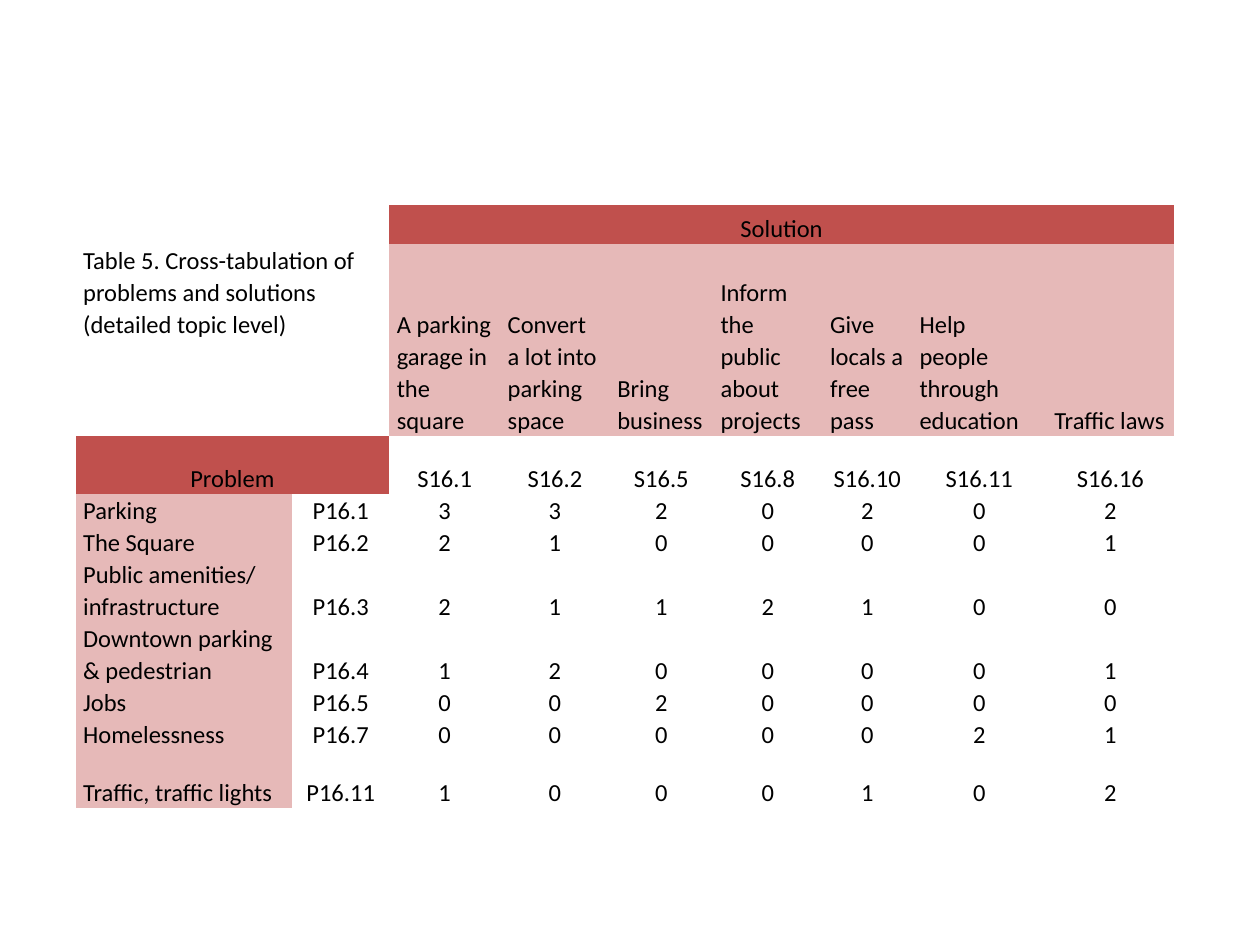
from pptx import Presentation
from pptx.dml.color import RGBColor
from pptx.enum import text
from pptx.util import Inches, Pt

FONT, SIZE, LINE_SPACING = "Calibri", 14, 1.07
BLACK, RED, PINK = "000000", "C0504D", "E6B9B8"
PLAIN_STYLE = "{2D5ABB26-0587-4C30-8999-92F81FD0307C}"

COLUMN_WIDTHS = [1.72, 0.77, 0.88, 0.87, 0.82, 0.87, 0.71, 1.07, 1.01]
LINE = 0.25
ROW_HEIGHTS = [0.31, 1.52, 0.46, LINE, LINE, 0.51, 0.51, LINE, LINE, 0.46]

CAPTION = "Table 5. Cross-tabulation of problems and solutions (detailed topic level)"
SOLUTIONS = [
    ("A parking garage in the square", "S16.1"),
    ("Convert a lot into parking space", "S16.2"),
    ("Bring business", "S16.5"),
    ("Inform the public about projects", "S16.8"),
    ("Give locals a free pass", "S16.10"),
    ("Help people through education", "S16.11"),
    ("Traffic laws", "S16.16"),
]
PROBLEMS = [
    ("Parking", "P16.1", [3, 3, 2, 0, 2, 0, 2]),
    ("The Square", "P16.2", [2, 1, 0, 0, 0, 0, 1]),
    ("Public amenities/ infrastructure", "P16.3", [2, 1, 1, 2, 1, 0, 0]),
    ("Downtown parking & pedestrian", "P16.4", [1, 2, 0, 0, 0, 0, 1]),
    ("Jobs", "P16.5", [0, 0, 2, 0, 0, 0, 0]),
    ("Homelessness", "P16.7", [0, 0, 0, 0, 0, 2, 1]),
    ("Traffic, traffic lights", "P16.11", [1, 0, 0, 0, 1, 0, 2]),
]


def color(value):
    return RGBColor.from_string(value)


def write_cell(cell, words, fill=None, centered=False, bottom=0):
    """Put bottom-anchored words in a cell; no fill colour leaves it clear."""
    cell.margin_left = cell.margin_right = Inches(0.06)
    cell.margin_top, cell.margin_bottom = 0, Inches(bottom)
    cell.vertical_anchor = text.MSO_ANCHOR.BOTTOM
    if fill:
        cell.fill.solid()
        cell.fill.fore_color.rgb = color(fill)
    else:
        cell.fill.background()
    para = cell.text_frame.paragraphs[0]
    para.line_spacing = LINE_SPACING
    para.alignment = text.PP_ALIGN.CENTER if centered else text.PP_ALIGN.LEFT
    span = para.add_run()
    span.text = str(words)
    span.font.name, span.font.size = FONT, Pt(SIZE)
    span.font.color.rgb = color(BLACK)


def add_plain_table(page, left, top):
    frame = page.shapes.add_table(
        len(ROW_HEIGHTS), len(COLUMN_WIDTHS), Inches(left), Inches(top),
        Inches(sum(COLUMN_WIDTHS)), Inches(sum(ROW_HEIGHTS)))
    table = frame.table
    table.first_row = table.horz_banding = False
    table._tbl.tblPr[0].text = PLAIN_STYLE
    for column, width in zip(table.columns, COLUMN_WIDTHS):
        column.width = Inches(width)
    for row, height in zip(table.rows, ROW_HEIGHTS):
        row.height = Inches(height)
    return table


def fill_headings(table):
    table.cell(0, 0).merge(table.cell(1, 1))
    table.cell(0, 2).merge(table.cell(0, len(COLUMN_WIDTHS) - 1))
    table.cell(2, 0).merge(table.cell(2, 1))
    write_cell(table.cell(0, 0), CAPTION, bottom=0.76)
    write_cell(table.cell(0, 2), "Solution", RED, centered=True)
    write_cell(table.cell(2, 0), "Problem", RED, centered=True)
    for column, (solution, code) in enumerate(SOLUTIONS, start=2):
        write_cell(table.cell(1, column), solution, PINK)
        write_cell(table.cell(2, column), code, centered=True)


def fill_counts(table):
    for row, (problem, code, counts) in enumerate(PROBLEMS, start=3):
        write_cell(table.cell(row, 0), problem, PINK)
        for column, value in enumerate([code, *counts], start=1):
            write_cell(table.cell(row, column), value, centered=True)


def main():
    deck = Presentation()
    deck.slide_width, deck.slide_height = Inches(10), Inches(7.5)
    page = deck.slides.add_slide(deck.slide_layouts[6])
    table = add_plain_table(page, 0.6, 1.63)
    fill_headings(table)
    fill_counts(table)
    deck.save("out.pptx")


if __name__ == "__main__":
    main()
